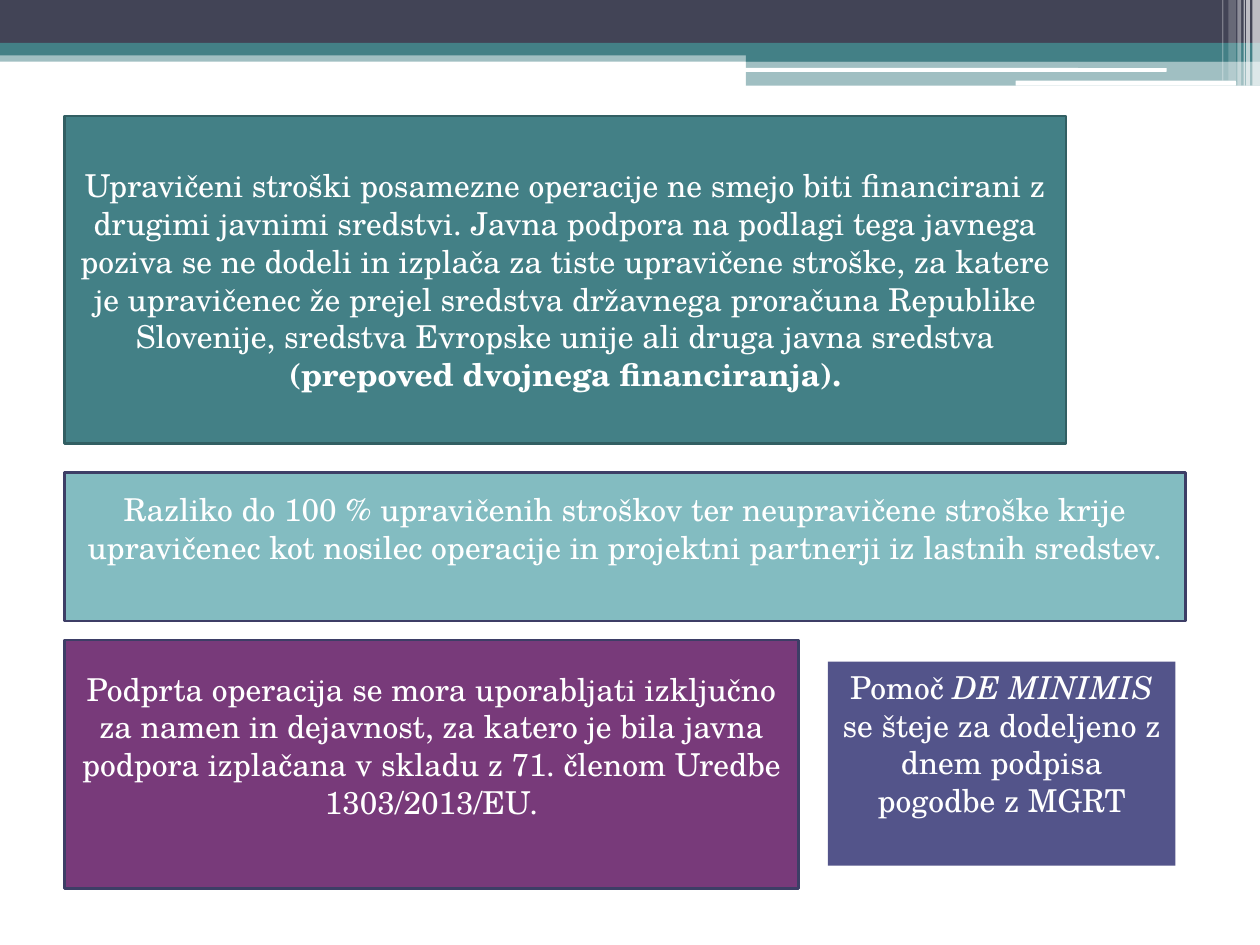
from typing import NamedTuple

from pptx import Presentation
from pptx.dml.color import RGBColor
from pptx.enum.shapes import MSO_SHAPE
from pptx.enum.text import MSO_ANCHOR, PP_ALIGN
from pptx.oxml.ns import qn
from pptx.shapes.autoshape import Shape
from pptx.slide import Slide
from pptx.util import Inches, Pt
from lxml.etree import SubElement

FONT = "TeX Gyre Schola"
WHITE, TEAL, SLATE, INDIGO = "FFFFFF", "438086", "424456", "3D3E66"


class Band(NamedTuple):
    left: float
    top: float
    width: float
    height: float
    color: str
    opacity: int = 100
    rounded: bool = False


class Phrase(NamedTuple):
    text: str
    bold: bool = False
    italic: bool = False


class Panel(NamedTuple):
    left: float
    top: float
    width: float
    height: float
    color: str
    border: str | None
    phrases: list[Phrase]
    bottom_inset: float = 0.05
    anchor: MSO_ANCHOR = MSO_ANCHOR.MIDDLE


STRIPES = [
    Band(9.94, 0, 0.06, 0.68, WHITE, 65),
    Band(9.89, 0, 0.03, 0.68, WHITE, 65),
    Band(9.87, 0, 0.01, 0.68, WHITE, 60),
    Band(9.82, 0, 0.03, 0.68, WHITE, 40),
    Band(9.75, 0, 0.06, 0.64, WHITE, 20),
    Band(9.7, 0, 0.01, 0.64, WHITE, 30),
]

HEADER = [
    Band(0, 0.4, 10, 0.09, TEAL, 50),
    Band(0, 0, 10, 0.34, SLATE),
    Band(0, 0.34, 10, 0.1, TEAL),
    Band(5.92, 0.39, 4.08, 0.1, TEAL),
    Band(5.92, 0.48, 4.08, 0.2, TEAL, 50),
    Band(5.91, 0.54, 3.35, 0.03, WHITE, rounded=True),
    Band(8.06, 0.64, 1.75, 0.04, WHITE, rounded=True),
]

PANELS = [
    Panel(0.51, 0.92, 7.95, 2.6, TEAL, "325F63", [
        Phrase("Upravičeni stroški posamezne operacije ne smejo biti financirani z "
               "drugimi javnimi sredstvi. Javna podpora na podlagi tega javnega poziva "
               "se ne dodeli in izplača za tiste upravičene stroške, za katere je "
               "upravičenec že prejel sredstva državnega proračuna Republike Slovenije, "
               "sredstva Evropske unije ali druga javna sredstva "),
        Phrase("(prepoved dvojnega financiranja).", bold=True),
    ]),
    Panel(0.51, 3.75, 8.9, 1.18, "83BCC1", INDIGO, [
        Phrase("Razliko do 100 % upravičenih stroškov ter neupravičene stroške krije "
               "upravičenec kot nosilec operacije in projektni partnerji iz lastnih "
               "sredstev."),
    ], bottom_inset=0.35),
    Panel(0.51, 5.08, 5.83, 1.97, "783A7A", INDIGO, [
        Phrase("Podprta operacija se mora uporabljati izključno za namen in dejavnost, "
               "za katero je bila javna podpora izplačana v skladu z 71. členom Uredbe "
               "1303/2013/EU."),
    ], bottom_inset=0.35),
    Panel(6.57, 5.25, 2.76, 1.62, "53548A", None, [
        Phrase("Pomoč "),
        Phrase("DE MINIMIS", italic=True),
        Phrase(" se šteje za dodeljeno z dnem podpisa pogodbe z MGRT"),
    ], anchor=MSO_ANCHOR.TOP),
]


def rgb(color: str) -> RGBColor:
    """Turn a hex string into a colour."""
    return RGBColor.from_string(color)


def add_block(slide: Slide, block: Band | Panel, preset: MSO_SHAPE) -> Shape:
    """Add a flat filled shape without an outline."""
    shape = slide.shapes.add_shape(
        preset, Inches(block.left), Inches(block.top),
        Inches(block.width), Inches(block.height))
    shape.shadow.inherit = False
    shape.fill.solid()
    shape.fill.fore_color.rgb = rgb(block.color)
    shape.line.fill.background()
    return shape


def draw_band(slide: Slide, band: Band) -> None:
    """Draw one decorative band of the header."""
    preset = MSO_SHAPE.ROUNDED_RECTANGLE if band.rounded else MSO_SHAPE.RECTANGLE
    shape = add_block(slide, band, preset)
    if band.opacity < 100:
        color = shape.fill._xPr.find(qn("a:solidFill"))[0]
        SubElement(color, qn("a:alpha"), val=str(band.opacity * 1000))


def draw_panel(slide: Slide, panel: Panel) -> None:
    """Draw one text panel with its phrases."""
    shape = add_block(slide, panel, MSO_SHAPE.RECTANGLE)
    if panel.border:
        shape.line.color.rgb = rgb(panel.border)
        shape.line.width = Pt(1.5)
    frame = shape.text_frame
    frame.word_wrap = True
    frame.vertical_anchor = panel.anchor
    frame.margin_bottom = Inches(panel.bottom_inset)
    paragraph = frame.paragraphs[0]
    paragraph.alignment = PP_ALIGN.CENTER
    paragraph.font.name = FONT
    paragraph.font.size = Pt(18)
    paragraph.font.color.rgb = rgb(WHITE)
    for phrase in panel.phrases:
        run = paragraph.add_run()
        run.text = phrase.text
        run.font.bold = phrase.bold
        run.font.italic = phrase.italic


def main() -> None:
    """Build the slide and save it."""
    deck = Presentation()
    deck.slide_width, deck.slide_height = Inches(10), Inches(7.5)
    slide = deck.slides.add_slide(deck.slide_layouts[6])
    for band in HEADER + STRIPES:
        draw_band(slide, band)
    for panel in PANELS:
        draw_panel(slide, panel)
    deck.save("out.pptx")


if __name__ == "__main__":
    main()
